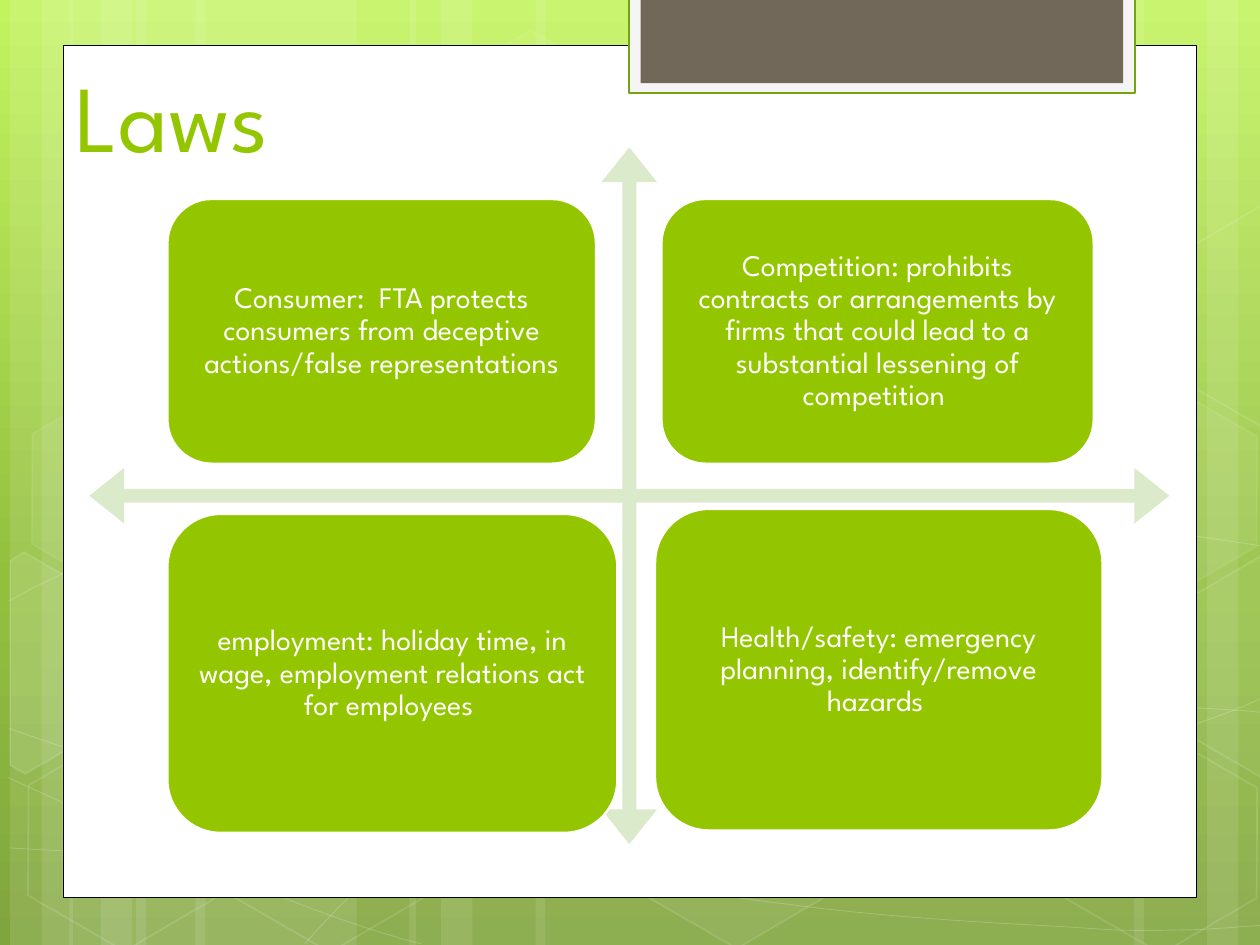
import copy
import math
import pptx
import pptx.util
import pptx.dml.color
import pptx.enum.shapes
import pptx.enum.text
import pptx.oxml.ns
import lxml.etree

KIND = pptx.enum.shapes.MSO_SHAPE
ALIGN = pptx.enum.text.PP_ALIGN
ANCHOR = pptx.enum.text.MSO_ANCHOR
qn = pptx.oxml.ns.qn
inch = pptx.util.Inches

WIDE, HIGH = 10, 7.5
PANEL = (0.5, 0.36, 9, 6.76)
FONT, LIME, WHITE = "League Spartan", "94C600", "FFFFFF"
TILT = 30

STRIPS = [(1.08, 1.75), (0.08, 0.5), (0.33, 0.83), (1.55, 1.75), (0.55, 0.5),
          (0.8, 0.83), (7.33, 1.75), (9.58, 0.5), (9, 0.83), (4.25, 3.08),
          (3.25, 0.5), (3.5, 0.83)]
# Each wave: a start point, then cubic segments of three points
WAVES = [
    [(0.07, 6.73), (0.61, 6.76), (1.15, 6.79), (1.9, 6.78), (2.65, 6.77),
     (3.58, 6.75), (4.58, 6.65), (5.58, 6.55), (7, 6.36), (7.92, 6.17),
     (8.83, 5.98), (9.77, 5.68), (10.07, 5.51)],
    [(0.07, 4.77), (0.36, 4.61), (0.65, 4.46), (1.21, 4.31), (1.78, 4.16),
     (2.59, 3.94), (3.47, 3.87), (4.36, 3.8), (5.44, 3.79), (6.54, 3.87),
     (7.64, 3.95), (9.47, 4.26), (10.07, 4.34)],
    [(0.06, 6.17), (1.27, 6.72), (2.47, 7.27), (3.34, 7.49)],
    [(0.07, 5.78), (0.38, 5.89), (0.7, 6), (1.28, 6.16), (1.86, 6.31),
     (2.73, 6.56), (3.57, 6.73), (4.4, 6.9), (5.45, 7.08), (6.28, 7.18),
     (7.11, 7.29), (8, 7.33), (8.53, 7.36), (9.05, 7.4), (9.19, 7.38),
     (9.45, 7.38), (9.71, 7.37), (9.89, 7.35), (10.07, 7.34)],
    [(2.42, 7.49), (2.6, 7.29), (2.78, 7.09), (3.02, 6.91), (3.26, 6.73),
     (3.6, 6.53), (3.88, 6.39), (4.16, 6.25), (4.33, 6.19), (4.7, 6.09),
     (5.06, 5.99), (5.73, 5.85), (6.08, 5.78), (6.44, 5.71), (6.49, 5.71),
     (6.8, 5.69), (7.11, 5.66), (7.6, 5.63), (7.94, 5.62), (8.29, 5.61),
     (8.86, 5.62), (8.86, 5.62), (9.08, 5.62), (9.31, 5.62), (9.53, 5.62),
     (9.71, 5.63), (9.88, 5.64), (9.97, 5.65), (10.06, 5.66), (10.03, 5.65),
     (10.06, 5.66)],
]
# left, top, fill alpha (0 for none), line alpha
CELLS = [(3.34, 0.36, 4, 8), (4.97, 5.89, 6, 12), (0.11, 5.91, 0, 12),
         (0.14, 3.12, 7, 8), (1.74, 5.92, 0, 12), (7.53, 4.53, 10, 12),
         (8.34, 5.93, 0, 12), (8.34, 3.14, 7, 8)]
# Cells cut by the slide's edge: centre, points as seen, fill alpha
SHARDS = [
    ((0.36, 5.35), [(0.08, 4.45), (0.19, 4.38), (0.96, 4.82), (0.95, 5.7),
                    (0.2, 6.14), (0.08, 6.07)], 10),
    ((9.85, 5.2), [(9.26, 4.85), (10.01, 4.41), (10.09, 4.46), (10.09, 6.13),
                   (10.02, 6.17), (9.26, 5.73)], 4),
    ((9.85, 2.41), [(9.26, 2.07), (10.01, 1.63), (10.1, 1.68), (10.09, 3.35),
                    (10.02, 3.39), (9.26, 2.95)], 0),
]
# left, top, width, height in percent of the arrows' box
LAWS = [
    ((7.23, 7.41, 39.67, 37.97),
     "Consumer:  FTA protects consumers from deceptive actions/false representations"),
    ((52.98, 7.41, 40.02, 37.97),
     "Competition: prohibits contracts or arrangements by firms that could lead "
     "to a substantial lessening of competition "),
    ((7.23, 52.62, 41.66, 45.75),
     "employment: holiday time, in wage, employment relations act for employees "),
    ((52.39, 51.9, 41.42, 46.11),
     "Health/safety: emergency planning, identify/remove hazards "),
]


def put(item, **vals):
    for name, val in vals.items():
        setattr(item, name, val)


def rgb(code):
    return pptx.dml.color.RGBColor.from_string(code)


def tint(fill, code, alpha, node):
    """Fill solid; node is the XML that holds the fill, for the alpha."""
    fill.solid()
    fill.fore_color.rgb = rgb(code)
    if alpha < 100:
        clr = node.find(qn("a:solidFill")).find(qn("a:srgbClr"))
        lxml.etree.SubElement(clr, qn("a:alpha")).set("val", str(alpha * 1000))


def paint(shape, fill=None, line=None, width=1, clear=100, faint=100):
    """Set fill and line; clear and faint are their opacities in percent."""
    shape.shadow.inherit = False
    prop = shape._element.spPr
    if fill and clear:
        tint(shape.fill, fill, clear, prop)
    else:
        shape.fill.background()
    if line:
        shape.line.width = pptx.util.Pt(width)
        tint(shape.line.fill, line, faint, prop.find(qn("a:ln")))
    else:
        shape.line.fill.background()


def draw(slide, kind, box, **look):
    shape = slide.shapes.add_shape(kind, *map(inch, box))
    paint(shape, **look)
    return shape


def trace(slide, points, close, **look):
    (x, y), *rest = points
    pen = slide.shapes.build_freeform(inch(x), inch(y))
    pen.add_line_segments([(inch(a), inch(b)) for a, b in rest], close=close)
    shape = pen.convert_to_shape()
    paint(shape, **look)
    return shape


def bend(shape):
    """Turn each three line segments into one cubic curve."""
    legs = list(shape._element.iter(qn("a:lnTo")))
    for first, *more in zip(*[iter(legs)] * 3):
        first.tag = qn("a:cubicBezTo")
        for leg in more:
            first.append(leg[0])
            leg.getparent().remove(leg)


def spin(points, hub, angle):
    cos, sin = math.cos(math.radians(angle)), math.sin(math.radians(angle))
    moved = [(x - hub[0], y - hub[1]) for x, y in points]
    return [(hub[0] + x * cos - y * sin, hub[1] + x * sin + y * cos) for x, y in moved]


def shade(slide, stops):
    """Fill the background from top to bottom."""
    fill = slide.background.fill
    fill.gradient()
    fill.gradient_angle = 270
    rack = slide._element.find(".//" + qn("a:gsLst"))
    rack.append(copy.deepcopy(rack[-1]))
    for stop, (place, code) in zip(fill.gradient_stops, stops):
        stop.position = place
        stop.color.rgb = rgb(code)


def decor(slide):
    for left, width in STRIPS:
        draw(slide, KIND.RECTANGLE, (left, 0, width, HIGH), fill=WHITE, clear=10)
    for knots in WAVES:
        bend(trace(slide, knots, False, line=WHITE, width=0.5, faint=20))
    for left, top, clear, faint in CELLS:
        cell = draw(slide, KIND.HEXAGON, (left, top, 1.75, 1.52), fill=WHITE,
                    clear=clear, line=WHITE, faint=faint)
        cell.rotation = TILT
        cell.adjustments[0] = 0.285
    for hub, points, clear in SHARDS:
        shard = trace(slide, spin(points, hub, -TILT), True, fill=WHITE,
                      clear=clear, line=WHITE, faint=12)
        shard.rotation = TILT


def frame(slide, box):
    """White panel with a tab hanging from the slide's top edge."""
    draw(slide, KIND.RECTANGLE, box, fill=WHITE, line="000000", width=0.5)
    mid = box[0] + 6.5
    for wide, high, look in ((4.02, 0.76, dict(fill="F5F5F5", line="74A510", width=1.25)),
                             (3.83, 0.68, dict(fill="71685A"))):
        draw(slide, KIND.RECTANGLE, (mid - wide / 2, -0.02, wide, high), **look)


def write(shape, text, size, code, align, anchor, **vals):
    body = shape.text_frame
    put(body, text=text, word_wrap=True, vertical_anchor=anchor, **vals)
    para = body.paragraphs[0]
    put(para, alignment=align, line_spacing=0.9)
    put(para.runs[0].font, name=FONT, size=pptx.util.Pt(size))
    para.runs[0].font.color.rgb = rgb(code)


def head(slide, box, text):
    title = slide.shapes.title
    put(title, **dict(zip(("left", "top", "width", "height"), map(inch, box))))
    write(title, text, 54, LIME, ALIGN.LEFT, ANCHOR.BOTTOM,
          auto_size=pptx.enum.text.MSO_AUTO_SIZE.NONE)
    slide.shapes._spTree.append(title._element)


def matrix(slide, box, laws):
    """Four laws around crossed arrows."""
    left, top, width, height = box
    cross = draw(slide, KIND.QUAD_ARROW, box, fill="DCEACC")
    for i, share in enumerate((0.02, 0.04, 0.05)):
        cross.adjustments[i] = share
    pad = dict.fromkeys(("margin_left", "margin_top", "margin_right", "margin_bottom"),
                        inch(0.07))
    for (x, y, w, h), text in laws:
        spot = (left + width * x / 100, top + height * y / 100,
                width * w / 100, height * h / 100)
        card = draw(slide, KIND.ROUNDED_RECTANGLE, spot, fill=LIME, line=WHITE, width=1.25)
        write(card, text, 17, WHITE, ALIGN.CENTER, ANCHOR.MIDDLE, **pad)


def main():
    deck = pptx.Presentation()
    put(deck, slide_width=inch(WIDE), slide_height=inch(HIGH))
    slide = deck.slides.add_slide(deck.slide_layouts[5])
    shade(slide, [(0, "C3F35F"), (0.62, "93BF3F"), (1, "81A53E")])
    decor(slide)
    frame(slide, PANEL)
    head(slide, (0.5, 0.17, 9, 1.25), "Laws")
    matrix(slide, (0.71, 1.17, 8.57, 5.53), LAWS)
    deck.save("out.pptx")


if __name__ == "__main__":
    main()
